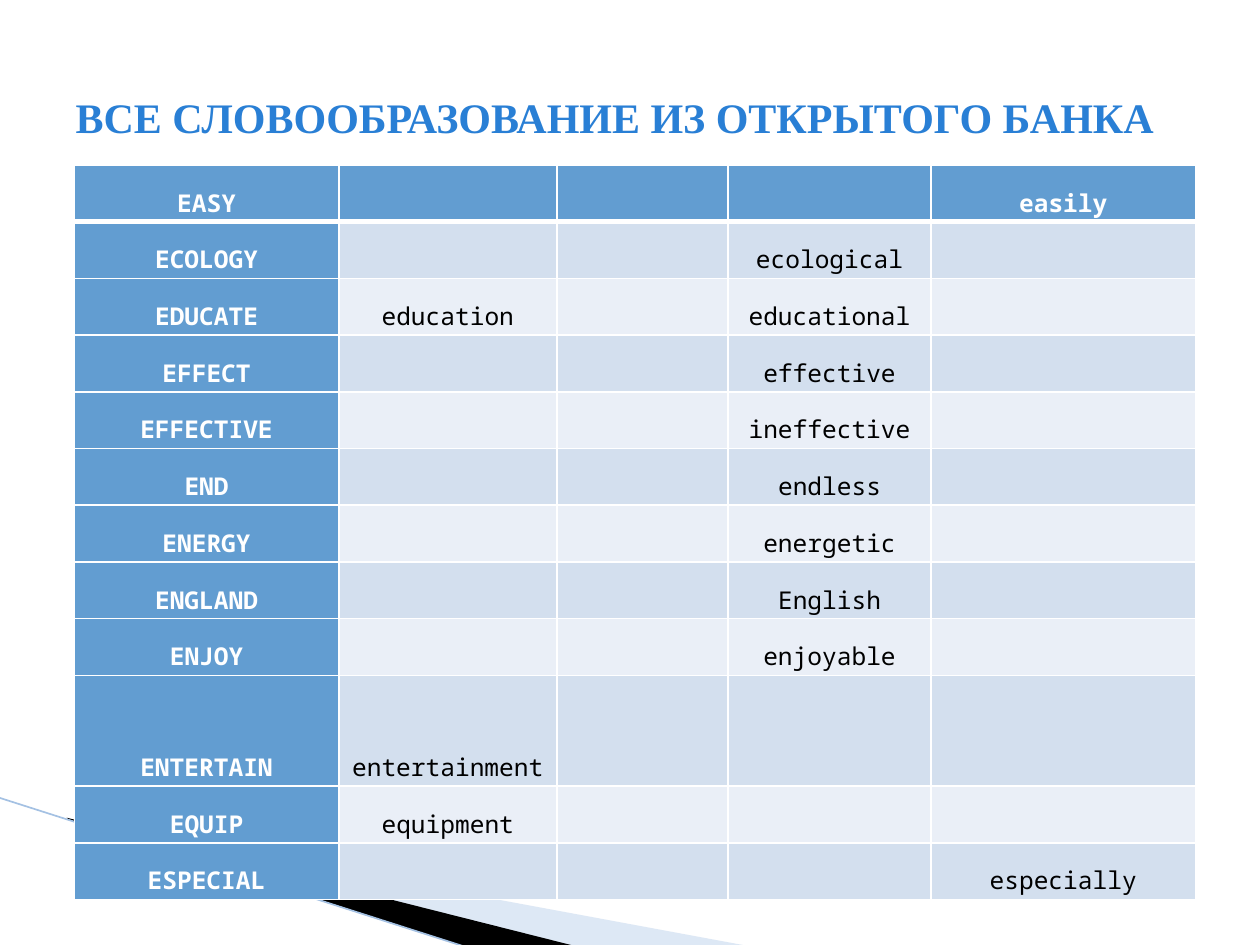
"""Build a word-formation table slide."""
from typing import NamedTuple

from lxml.etree import SubElement as Sub
from pptx import Presentation
from pptx.dml.color import RGBColor as RGB
from pptx.enum.shapes import MSO_CONNECTOR as CONN
from pptx.enum.text import MSO_ANCHOR as ANCHOR, MSO_AUTO_SIZE as AUTO, PP_ALIGN as ALIGN
from pptx.oxml.ns import qn
from pptx.util import Pt

WHITE, BLACK, BLUE = "FFFFFF", "000000", "629DD1"
BANDS = ("EAEFF7", "D3DFEE")
COL_WIDTHS = (151.2, 124.56, 97.92, 115.92, 151.2)
ROW_HEIGHT, TALL_HEIGHT = 32.4, 63.36


class Word(NamedTuple):
    root: str
    derived: str
    col: int
    height: float = ROW_HEIGHT


class Wedge(NamedTuple):
    points: tuple
    color: str
    alpha: int


WORDS = (
    Word("EASY", "easily", 4),
    Word("ECOLOGY", "ecological", 3),
    Word("EDUCATE", "educational", 3),
    Word("EFFECT", "effective", 3),
    Word("EFFECTIVE", "ineffective", 3),
    Word("END", "endless", 3),
    Word("ENERGY", "energetic", 3),
    Word("ENGLAND", "English", 3),
    Word("ENJOY", "enjoyable", 3),
    Word("ENTERTAIN", "entertainment", 1, TALL_HEIGHT),
    Word("EQUIP", "equipment", 1),
    Word("ESPECIAL", "especially", 4),
)
EXTRA_NOUNS = {"EDUCATE": "education"}
WEDGES = (
    Wedge(((39.6, 468.72), (428.4, 540.72), (328.32, 540.72), (39.6, 468)), "ABC6E6", 40),
    Wedge(((38.16, 467.28), (329.04, 540.72), (267.84, 541.44), (38.88, 468)), BLACK, 100),
)


def rgb(color: str) -> RGB:
    return RGB.from_string(color)


def add_run(p, text: str, font: str, size: float, color: str, bold: bool) -> None:
    r = p.add_run()
    r.text = text
    r.font.name, r.font.size, r.font.bold = font, Pt(size), bold
    r.font.color.rgb = rgb(color)


def add_wedge(s, wedge: Wedge) -> None:
    start, *rest = [(Pt(x), Pt(y)) for x, y in wedge.points]
    fb = s.shapes.build_freeform(*start)
    fb.add_line_segments(rest, close=True)
    sp = fb.convert_to_shape()
    sp.shadow.inherit = False
    sp.fill.solid()
    sp.fill.fore_color.rgb = rgb(wedge.color)
    sp.line.fill.background()
    if wedge.alpha < 100:
        clr = sp.fill._xPr.find(f".//{qn('a:srgbClr')}")
        Sub(clr, qn("a:alpha"), val=str(wedge.alpha * 1000))


def add_line(s, x1: float, y1: float, x2: float, y2: float, color: str, width: float) -> None:
    cx = s.shapes.add_connector(CONN.STRAIGHT, Pt(x1), Pt(y1), Pt(x2), Pt(y2))
    cx.line.color.rgb = rgb(color)
    cx.line.width = Pt(width)
    Sub(cx._element.spPr, qn("a:effectLst"))


def style_cell(cell, fill: str, top: float, bottom: float) -> None:
    tcPr = cell._tc.get_or_add_tcPr()
    for side, width in (("L", 1), ("R", 1), ("T", top), ("B", bottom)):
        ln = Sub(tcPr, qn(f"a:ln{side}"), w=str(Pt(width)))
        Sub(Sub(ln, qn("a:solidFill")), qn("a:srgbClr"), val=WHITE)
    cell.fill.solid()
    cell.fill.fore_color.rgb = rgb(fill)


def write_cell(cell, text: str, strong: bool) -> None:
    cell.vertical_anchor = ANCHOR.BOTTOM
    cell.margin_left = cell.margin_right = Pt(2.16)
    cell.margin_top = cell.margin_bottom = Pt(1.44)
    p = cell.text_frame.paragraphs[0]
    p.alignment, p.line_spacing = ALIGN.CENTER, 1.5
    add_run(p, text, "Noto Sans Mono", 14, WHITE if strong else BLACK, strong)


def add_words(s, left: float, top: float) -> None:
    height = sum(word.height for word in WORDS)
    frame = s.shapes.add_table(len(WORDS), len(COL_WIDTHS), Pt(left), Pt(top),
                               Pt(sum(COL_WIDTHS)), Pt(height))
    tbl = frame.table
    for col, width in zip(tbl.columns, COL_WIDTHS):
        col.width = Pt(width)
    for i, word in enumerate(WORDS):
        tbl.rows[i].height = Pt(word.height)
        texts = {0: word.root, word.col: word.derived}
        if word.root in EXTRA_NOUNS:
            texts[1] = EXTRA_NOUNS[word.root]
        for j in range(len(COL_WIDTHS)):
            cell = tbl.cell(i, j)
            strong = i == 0 or j == 0
            style_cell(cell, BLUE if strong else BANDS[i % 2],
                       3 if i == 1 else 1, 3 if i == 0 else 1)
            if j in texts:
                write_cell(cell, texts[j], strong)


def add_title(s, text: str) -> None:
    sp = s.shapes.title
    sp.left, sp.top, sp.width, sp.height = Pt(36), Pt(21.6), Pt(648), Pt(90)
    tf = sp.text_frame
    tf.word_wrap, tf.auto_size = True, AUTO.NONE
    tf.vertical_anchor = ANCHOR.MIDDLE
    p = tf.paragraphs[0]
    p.alignment = ALIGN.LEFT
    add_run(p, text, "Times New Roman", 24, "297FD5", True)


def main() -> None:
    prs = Presentation()
    prs.slide_width, prs.slide_height = Pt(720), Pt(540)
    s = prs.slides.add_slide(prs.slide_layouts[5])
    for wedge in WEDGES:
        add_wedge(s, wedge)
    add_line(s, -0.72, 455.76, 267.12, 541.44, "A4C1E3", 0.95)
    add_words(s, 42.48, 94.32)
    add_title(s, "ВСЕ СЛОВООБРАЗОВАНИЕ ИЗ ОТКРЫТОГО БАНКА")
    prs.save("out.pptx")


if __name__ == "__main__":
    main()
